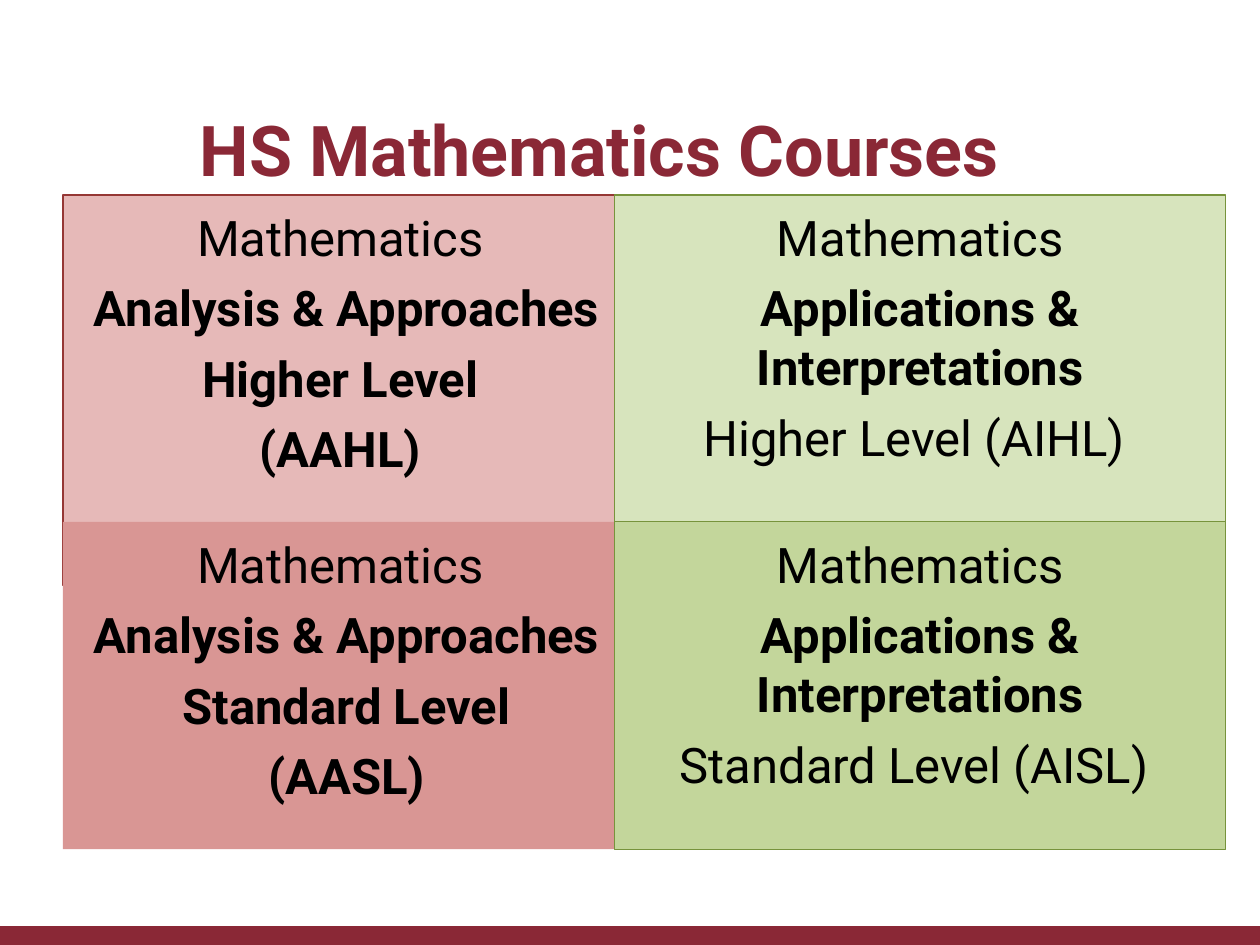
from pptx import Presentation, util as u
from pptx.dml.color import RGBColor
from pptx.enum import shapes, text

MAROON = RGBColor(0x8A, 0x28, 0x36)
BLACK = RGBColor(0x00, 0x00, 0x00)
ROSE = RGBColor(0xE6, 0xB9, 0xB8)
DARK_ROSE = RGBColor(0xD9, 0x96, 0x94)
ROSE_EDGE = RGBColor(0x95, 0x37, 0x35)
LIME = RGBColor(0xD7, 0xE4, 0xBD)
DARK_LIME = RGBColor(0xC3, 0xD6, 0x9B)
LIME_EDGE = RGBColor(0x77, 0x93, 0x3C)


def write(paragraph, content, *, font="Roboto", size=28, color=BLACK, bold=False, before=0):
    paragraph.alignment = text.PP_ALIGN.CENTER
    paragraph.space_before = u.Pt(before)
    run = paragraph.add_run()
    run.text = content
    run.font.name = font
    run.font.size = u.Pt(size)
    run.font.bold = bold
    run.font.color.rgb = color


class SlideBuilder:
    """Adds styled elements to the current slide; lengths are centimetres."""

    inset = u.Cm(0.25)
    gap = 6.7

    def __init__(self, slide):
        self.slide = slide

    def rectangle(self, left, top, width, height, fill, edge=None):
        shape = self.slide.shapes.add_shape(
            shapes.MSO_SHAPE.RECTANGLE, u.Cm(left), u.Cm(top), u.Cm(width), u.Cm(height))
        shape.shadow.inherit = False
        shape.fill.solid()
        shape.fill.fore_color.rgb = fill
        if edge is None:
            shape.line.fill.background()
        else:
            shape.line.color.rgb = edge
            shape.line.width = u.Pt(0.75)
        return shape

    def title(self, left, top, width, height, content):
        box = self.slide.shapes.add_textbox(u.Cm(left), u.Cm(top), u.Cm(width), u.Cm(height))
        frame = box.text_frame
        frame.word_wrap = True
        frame.vertical_anchor = text.MSO_ANCHOR.MIDDLE
        write(frame.paragraphs[0], content, size=40, color=MAROON, bold=True)

    def course(self, left, top, width, height, fill, edge, lines):
        frame = self.rectangle(left, top, width, height, fill, edge).text_frame
        frame.word_wrap = True
        frame.vertical_anchor = text.MSO_ANCHOR.TOP
        frame.margin_left = frame.margin_right = self.inset
        frame.margin_top = frame.margin_bottom = self.inset
        for index, (content, bold) in enumerate(lines):
            paragraph = frame.add_paragraph() if index else frame.paragraphs[0]
            write(paragraph, content, bold=bold, before=self.gap if index else 0)


def analysis(level, code):
    return [("Mathematics ", False), ("Analysis & Approaches", True), (level, True), (code, True)]


def applications(level):
    return [("Mathematics", False), ("Applications & Interpretations", True), (level, False)]


def main():
    presentation = Presentation()
    presentation.slide_width, presentation.slide_height = u.Cm(25.4), u.Cm(19.05)
    builder = SlideBuilder(presentation.slides.add_slide(presentation.slide_layouts[6]))

    # Footer band and title
    builder.rectangle(0, 18.67, 25.4, 0.38, MAROON)
    builder.title(1.27, 1.65, 21.62, 2.67, "HS Mathematics Courses")

    # Course grid: the right column overlaps the left, the lower row the tall first box
    left, right = (1.27, 11.43), (12.39, 12.32)
    upper, lower, height = 3.93, 10.52, 6.6
    courses = [
        (left, upper, 7.87, ROSE, ROSE_EDGE, analysis("Higher Level ", "(AAHL) ")),
        (right, upper, height, LIME, LIME_EDGE, applications("Higher Level (AIHL) ")),
        (left, lower, height, DARK_ROSE, None, analysis("Standard Level", "(AASL)")),
        (right, lower, height, DARK_LIME, LIME_EDGE, applications("Standard Level (AISL) ")),
    ]
    for (x, width), y, box_height, fill, edge, lines in courses:
        builder.course(x, y, width, box_height, fill, edge, lines)

    presentation.save("out.pptx")


if __name__ == "__main__":
    main()
